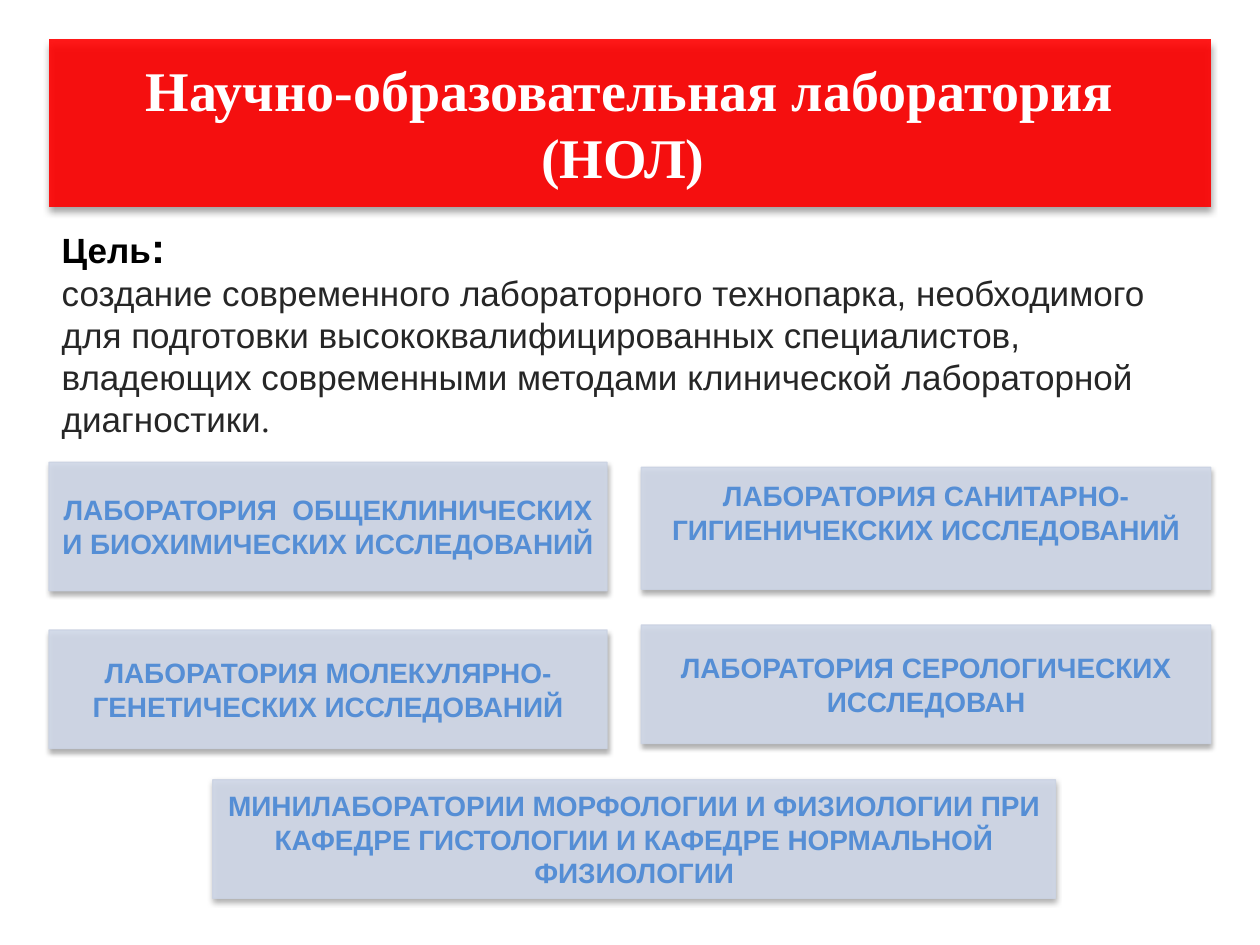
from lxml.etree import SubElement
from pptx import Presentation
from pptx.dml.color import RGBColor
from pptx.enum.shapes import MSO_SHAPE
from pptx.enum.text import MSO_ANCHOR, MSO_AUTO_SIZE, PP_ALIGN
from pptx.oxml.ns import qn
from pptx.util import Cm, Pt

COLORS = {
    "banner": "FF0000",
    "banner_text": "FFFFFF",
    "lab": "D0D8E8",
    "lab_line": "CBD3E3",
    "lab_text": "558ED5",
    "heading": "000000",
    "goal": "262626",
    "shadow": "000000",
}
BANNER_FONT = {"name": "Times New Roman", "size": Pt(32), "bold": True}
LAB_FONT = {"name": "Arial", "size": Pt(16), "bold": True}
BANNER_SHADOW = {"alpha": 40, "blur": 4, "distance": 3}
LAB_SHADOW = {"alpha": 35, "blur": 3.1, "distance": 1.8}

LEFT, RIGHT_COLUMN = 0.99, 12.93
LEFT_WIDTH, RIGHT_WIDTH, FULL_WIDTH = 11.25, 11.48, 23.42
LAB_HEIGHT = 2.39
LABS = [
    ("ЛАБОРАТОРИЯ  ОБЩЕКЛИНИЧЕСКИХ И БИОХИМИЧЕСКИХ ИССЛЕДОВАНИЙ",
     (LEFT, 9.32, LEFT_WIDTH, 2.59), 0.13),
    ("ЛАБОРАТОРИЯ САНИТАРНО-ГИГИЕНИЧЕКСКИХ ИССЛЕДОВАНИЙ",
     (RIGHT_COLUMN, 9.42, RIGHT_WIDTH, 2.46), 0.76),
    ("ЛАБОРАТОРИЯ МОЛЕКУЛЯРНО- ГЕНЕТИЧЕСКИХ ИССЛЕДОВАНИЙ",
     (LEFT, 12.7, LEFT_WIDTH, LAB_HEIGHT), 0.13),
    ("ЛАБОРАТОРИЯ СЕРОЛОГИЧЕСКИХ ИССЛЕДОВАН",
     (RIGHT_COLUMN, 12.6, RIGHT_WIDTH, LAB_HEIGHT), 0.13),
    ("МИНИЛАБОРАТОРИИ МОРФОЛОГИИ И ФИЗИОЛОГИИ ПРИ КАФЕДРЕ ГИСТОЛОГИИ "
     "И КАФЕДРЕ НОРМАЛЬНОЙ ФИЗИОЛОГИИ",
     (4.29, 15.72, 16.99, LAB_HEIGHT), 0.13),
]


def apply_format(target, values):
    """Set each named attribute of the target."""
    for name, value in values.items():
        setattr(target, name, value)


def add_run(paragraph, text, font, color):
    """Append a formatted run to the paragraph."""
    run = paragraph.add_run()
    run.text = text
    apply_format(run.font, font)
    run.font.color.rgb = RGBColor.from_string(COLORS[color])


def add_alpha(color_element, percent):
    """Make a colour element partly transparent."""
    SubElement(color_element, qn("a:alpha"), val=str(percent * 1000))


def add_shadow(shape, alpha, blur, distance):
    """Drop a soft shadow straight down from the shape."""
    shape.shadow.inherit = False
    effects = shape._element.spPr.find(qn("a:effectLst"))
    outer = SubElement(effects, qn("a:outerShdw"), blurRad=str(Pt(blur)),
                       dist=str(Pt(distance)), dir="5400000", rotWithShape="0")
    add_alpha(SubElement(outer, qn("a:srgbClr"), val=COLORS["shadow"]), alpha)


def add_panel(slide, box, text, fill, font, shadow):
    """Add a shadowed rectangle with centred text."""
    panel = slide.shapes.add_shape(MSO_SHAPE.RECTANGLE, *map(Cm, box))
    panel.fill.solid()
    panel.fill.fore_color.rgb = RGBColor.from_string(COLORS[fill])
    panel.line.fill.background()
    add_alpha(panel._element.spPr.find(qn("a:solidFill"))[0], 90)
    add_shadow(panel, **shadow)
    apply_format(panel.text_frame,
                 {"word_wrap": True, "vertical_anchor": MSO_ANCHOR.MIDDLE})
    paragraph = panel.text_frame.paragraphs[0]
    paragraph.alignment = PP_ALIGN.CENTER
    add_run(paragraph, text, font, f"{fill}_text")
    return panel


def add_lab(slide, box, text, bottom_margin):
    """Add one outlined laboratory panel."""
    lab = add_panel(slide, box, text, "lab", LAB_FONT, LAB_SHADOW)
    lab.line.color.rgb = RGBColor.from_string(COLORS["lab_line"])
    lab.line.width = Pt(0.75)
    add_alpha(lab.line._ln.find(qn("a:solidFill"))[0], 90)
    lab.text_frame.margin_bottom = Cm(bottom_margin)


def place_goal(slide, box):
    """Move the title placeholder into the box and write the goal in it."""
    goal = slide.shapes.title
    apply_format(goal, dict(zip(("left", "top", "width", "height"), map(Cm, box))))
    apply_format(goal.text_frame, {"word_wrap": True,
                                   "auto_size": MSO_AUTO_SIZE.NONE,
                                   "vertical_anchor": MSO_ANCHOR.MIDDLE})
    paragraph = goal.text_frame.paragraphs[0]
    paragraph.alignment = PP_ALIGN.LEFT
    heading = {"name": "Arial", "size": Pt(20), "bold": True}
    body = {**heading, "bold": False}
    add_run(paragraph, "Цель", heading, "heading")
    add_run(paragraph, ":", {**heading, "size": Pt(24)}, "heading")
    paragraph.add_line_break()
    add_run(paragraph, "создание современного лабораторного технопарка, "
            "необходимого для подготовки высококвалифицированных специалистов, "
            "владеющих современными методами клинической лабораторной "
            "диагностики", body, "goal")
    add_run(paragraph, ".", {**body, "name": "Times New Roman"}, "goal")


def main():
    """Build the laboratory slide and save it."""
    presentation = Presentation()
    apply_format(presentation, {"slide_width": Cm(25.4), "slide_height": Cm(19.05)})
    slide = presentation.slides.add_slide(presentation.slide_layouts[5])
    place_goal(slide, (LEFT, 4.57, FULL_WIDTH, 4.19))
    add_panel(slide, (LEFT, 0.79, FULL_WIDTH, 3.38),
              "Научно-образовательная лаборатория (НОЛ) ",
              "banner", BANNER_FONT, BANNER_SHADOW)
    for text, box, bottom_margin in LABS:
        add_lab(slide, box, text, bottom_margin)
    presentation.save("out.pptx")


if __name__ == "__main__":
    main()
